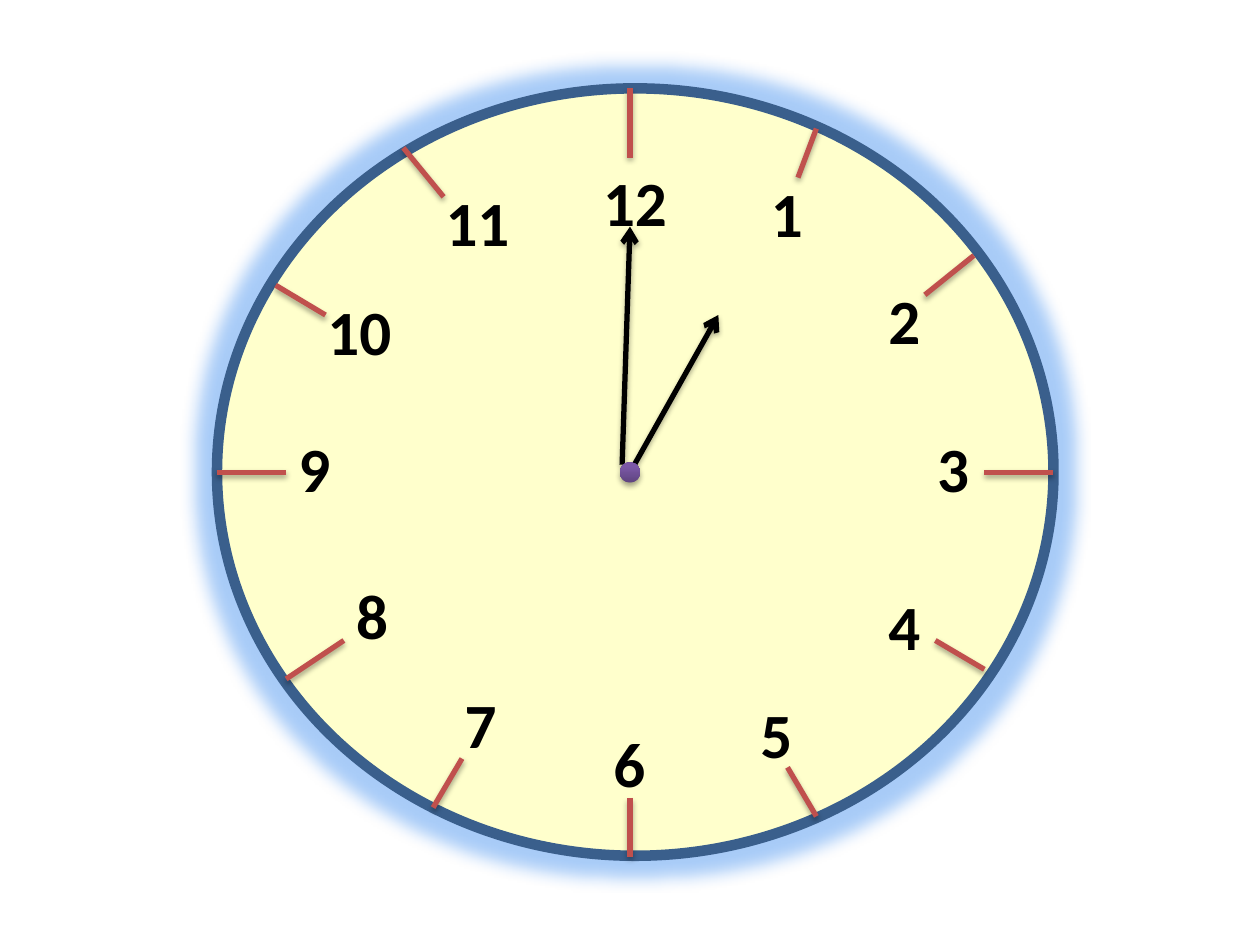
from lxml.etree import SubElement
from pptx import Presentation
from pptx.dml.color import RGBColor
from pptx.enum.shapes import MSO_CONNECTOR, MSO_SHAPE
from pptx.enum.text import MSO_AUTO_SIZE
from pptx.oxml import parse_xml
from pptx.oxml.ns import nsdecls, qn
from pptx.util import Pt

CREAM = RGBColor(0xFF, 0xFF, 0xCC)
BLUE = RGBColor(0x3A, 0x5F, 0x8C)
RED = RGBColor(0xC0, 0x50, 0x4D)
BLACK = RGBColor(0, 0, 0)
PLUM = RGBColor(0x5F, 0x44, 0x80)
VIOLET = RGBColor(0x7B, 0x58, 0xA6)
GLOW = RGBColor(0x26, 0x7F, 0xED)

CAST = f'dist="{Pt(1.8)}" dir="5400000" rotWithShape="0"'


def add_effect(shape, kind, color, alpha, blur, extra=""):
    props = shape._element.spPr
    for old in props.findall(qn("a:effectLst")):
        props.remove(old)
    size = "rad" if kind == "glow" else "blurRad"
    props.append(parse_xml(
        f'<a:effectLst {nsdecls("a")}><a:{kind} {size}="{Pt(blur)}" {extra}>'
        f'<a:srgbClr val="{color}"><a:alpha val="{alpha * 1000}"/></a:srgbClr>'
        f'</a:{kind}></a:effectLst>'))


def add_line(ends, color):
    line = shapes.add_connector(MSO_CONNECTOR.STRAIGHT, *[Pt(v) for v in ends])
    line.line.color.rgb = color
    line.line.width = Pt(3)
    add_effect(line, "outerShdw", BLACK, 35, 3.1, CAST)
    return line


deck = Presentation()
deck.slide_width, deck.slide_height = Pt(720), Pt(540)
shapes = deck.slides.add_slide(deck.slide_layouts[6]).shapes

face = shapes.add_shape(MSO_SHAPE.OVAL, Pt(124), Pt(50.5), Pt(478), Pt(438.5))
face.shadow.inherit = False
face.fill.solid()
face.fill.fore_color.rgb = CREAM
face.line.color.rgb = BLUE
face.line.width = Pt(6)
add_effect(face, "glow", GLOW, 40, 18)

ticks = [
    (124, 270, 163.5, 270), (360, 50.5, 360, 90),
    (562.5, 270, 602, 270), (360, 456, 360, 489.5),
    (230.5, 84.5, 253.5, 112.5), (157.5, 163, 186, 180),
    (534.5, 366, 562.5, 382.5), (163.5, 388, 196.5, 366),
    (450, 438.5, 466.5, 466.5), (466.5, 73.5, 456, 101.5),
    (528.5, 168.5, 556.5, 146), (264, 433.5, 247.5, 461.5),
]
for ends in ticks:
    add_line(ends, RED)

hours = {
    12: (337.5, 90), 6: (343.5, 410.5), 3: (528.5, 242), 9: (163.5, 242),
    1: (433.5, 96), 2: (500.5, 157.5), 4: (500.5, 332), 5: (427.5, 394),
    7: (258.5, 388), 8: (196.5, 326), 10: (180, 163.5), 11: (247.5, 101.5),
}
for hour, (left, top) in hours.items():
    width = 51 if hour > 9 else 33
    box = shapes.add_textbox(Pt(left), Pt(top), Pt(width), Pt(51))
    frame = box.text_frame
    frame.word_wrap = False
    frame.auto_size = MSO_AUTO_SIZE.SHAPE_TO_FIT_TEXT
    text = frame.paragraphs[0]
    text.text = str(hour)
    text.font.name = "Calibri"
    text.font.size = Pt(36)
    text.font.bold = True
    text.font.color.rgb = BLACK

for ends in [(360, 270, 410.5, 180), (355.5, 265.5, 360, 129.5)]:
    hand = add_line(ends, BLACK)
    SubElement(hand.line._get_or_add_ln(), qn("a:tailEnd"), type="arrow")

hub = shapes.add_shape(MSO_SHAPE.OVAL, Pt(354.25), Pt(264.25), Pt(11.5), Pt(11.5))
hub.shadow.inherit = False
hub.fill.gradient()
hub.fill.gradient_angle = 90
for stop, color, place in zip(hub.fill.gradient_stops, (PLUM, VIOLET), (0, 0.8)):
    stop.color.rgb = color
    stop.position = place
hub.line.fill.background()
add_effect(hub, "outerShdw", BLACK, 35, 3.1, CAST)

deck.save("out.pptx")
